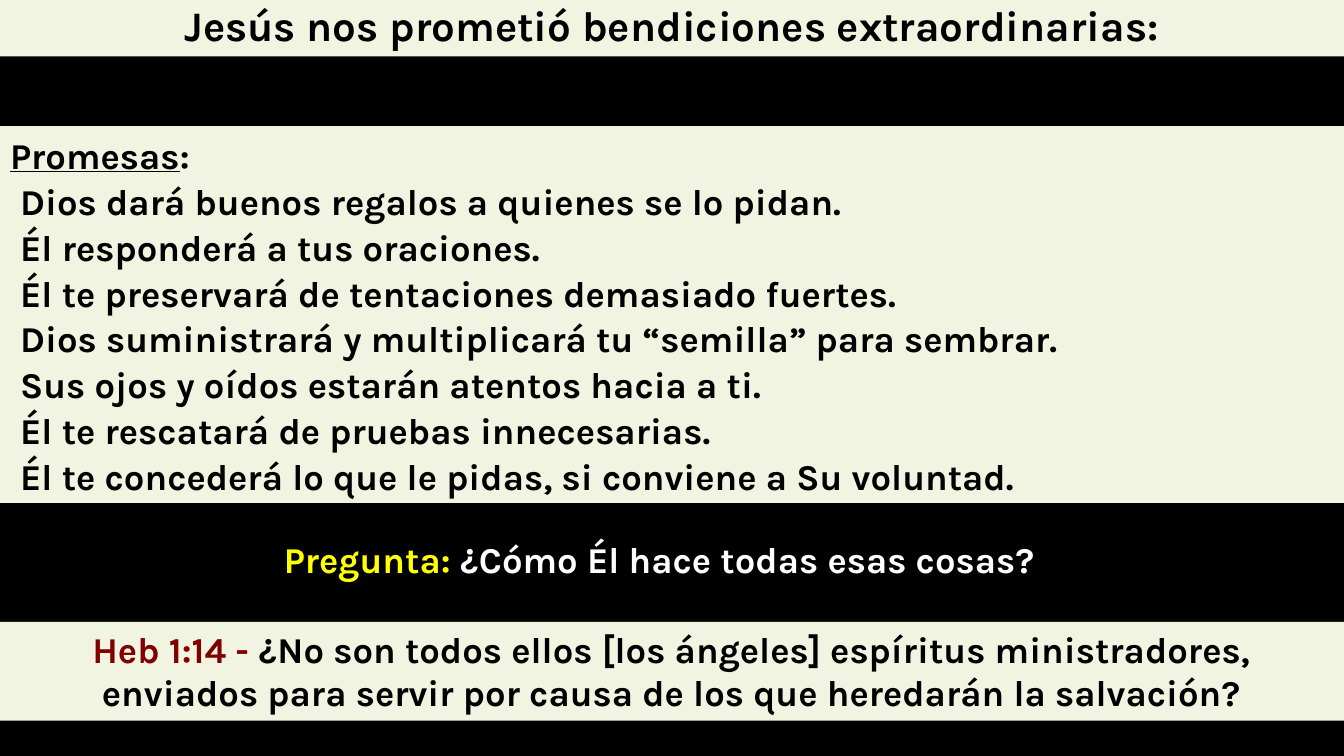
from lxml import etree
from pptx import Presentation
from pptx.dml.color import RGBColor
from pptx.enum.text import MSO_ANCHOR, MSO_AUTO_SIZE, PP_ALIGN
from pptx.oxml.ns import qn
from pptx.util import Inches, Pt

TOP = MSO_ANCHOR.TOP
FIXED = MSO_AUTO_SIZE.NONE
LEFT, CENTER = PP_ALIGN.LEFT, PP_ALIGN.CENTER
BLACK = RGBColor(0x00, 0x00, 0x00)
WHITE = RGBColor(0xFF, 0xFF, 0xFF)
CREAM = RGBColor(0xF1, 0xF4, 0xE0)
YELLOW = RGBColor(0xFF, 0xFF, 0x00)
MAROON = RGBColor(0x80, 0x00, 0x00)
WIDTH = 13.33
TITLE = "Jesús nos prometió bendiciones extraordinarias:"
PROMISES = [
    "Dios dará buenos regalos a quienes se lo pidan.",
    "Él responderá a tus oraciones.",
    "Él te preservará de tentaciones demasiado fuertes.",
    "Dios suministrará y multiplicará tu “semilla” para sembrar.",
    "Sus ojos y oídos estarán atentos hacia a ti.",
    "Él te rescatará de pruebas innecesarias.",
    "Él te concederá lo que le pidas, si conviene a Su voluntad.",
]
VERSE = ("¿No son todos ellos [los ángeles] espíritus ministradores, "
         "enviados para servir por causa de los que heredarán la salvación?")


def place(shape, left, top, width, height, fill=None):
    """Position a shape, fill it and prepare its text frame."""
    shape.left, shape.top = Inches(left), Inches(top)
    shape.width, shape.height = Inches(width), Inches(height)
    if fill is not None:
        shape.fill.solid()
        shape.fill.fore_color.rgb = fill
    frame = shape.text_frame
    frame.word_wrap = True
    frame.auto_size = FIXED
    frame.vertical_anchor = TOP
    return frame


def style(para, size=26, align=CENTER, spacing=1.0, color=BLACK):
    """Format a whole paragraph."""
    para.alignment = align
    para.line_spacing = spacing
    para.space_before = para.space_after = Pt(0)
    font = para.font
    font.name, font.size, font.bold = "Karla", Pt(size), True
    font.color.rgb = color


def indent(para, margin):
    """Set a left margin and remove the bullet."""
    props = para._p.get_or_add_pPr()
    props.set("marL", str(Inches(margin)))
    props.set("indent", "0")
    mark = etree.Element(qn("a:buNone"))
    props.insert_element_before(mark, "a:tabLst", "a:defRPr", "a:extLst")


def add_list(frame, head, items):
    """Write an underlined heading and its indented items."""
    para = frame.paragraphs[0]
    style(para, align=LEFT, spacing=1.05)
    indent(para, 0)
    run = para.add_run()
    run.text = head
    run.font.underline = True
    para.add_run().text = ":"
    for item in items:
        para = frame.add_paragraph()
        para.text = item
        style(para, align=LEFT, spacing=1.05)
        indent(para, 0.1)


def add_pair(frame, label, text, tint, color):
    """Write a coloured label followed by its text."""
    para = frame.paragraphs[0]
    style(para, color=color)
    for part, shade in ((label, tint), (text, color)):
        run = para.add_run()
        run.text = part
        run.font.color.rgb = shade


def add_band(slide, top, height):
    """Add a full-width cream band."""
    band = slide.shapes.add_shape(1, 0, 0, 0, 0)
    band.shadow.inherit = False
    band.line.fill.background()
    return place(band, 0, top, WIDTH, height, CREAM)


def main():
    """Build and save the slide."""
    deck = Presentation()
    deck.slide_width, deck.slide_height = Inches(WIDTH), Inches(7.5)
    slide = deck.slides.add_slide(deck.slide_layouts[1])
    slide.background.fill.solid()
    slide.background.fill.fore_color.rgb = BLACK

    frame = place(slide.shapes.title, 0, 0, WIDTH, 0.56, CREAM)
    frame.text = TITLE
    style(frame.paragraphs[0], size=30, spacing=0.9)

    body = place(slide.placeholders[1], 0, 1.25, WIDTH, 3.74, CREAM)
    add_list(body, "Promesas", PROMISES)

    box = slide.shapes.add_textbox(0, 0, 0, 0)
    ask = place(box, 2.33, 5.28, 8.42, 0.54)
    add_pair(ask, "Pregunta: ", "¿Cómo Él hace todas esas cosas?", YELLOW, WHITE)

    add_pair(add_band(slide, 6.17, 0.98), "Heb 1:14 - ", VERSE, MAROON, BLACK)
    deck.save("out.pptx")


if __name__ == "__main__":
    main()
